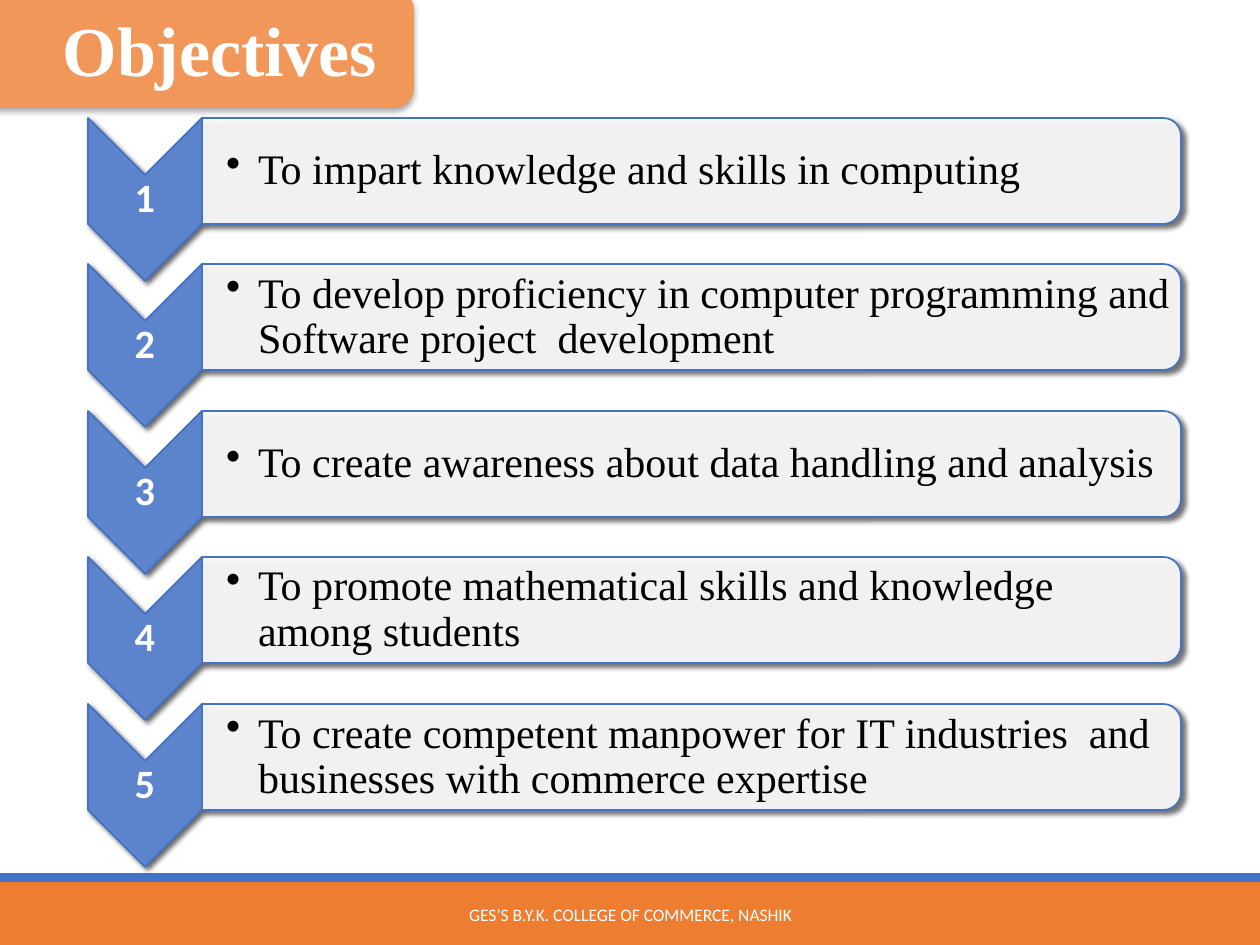
from lxml.etree import SubElement
from pptx import Presentation
from pptx.dml.color import RGBColor
from pptx.enum.shapes import MSO_SHAPE as Preset
from pptx.enum.text import MSO_ANCHOR as Anchor, PP_ALIGN as Align
from pptx.oxml.ns import qn
from pptx.util import Pt

COLORS = {
    "orange": "ED7D31",
    "tab": "F19759",
    "blue": "4472C4",
    "chevron": "5C84CC",
    "white": "FFFFFF",
    "black": "000000",
}
SERIF, SANS = "Times New Roman", "Calibri"
PX_PER_INCH = 126
ROW_PITCH = 146.4
OBJECTIVES = [
    "To impart knowledge and skills in computing",
    "To develop proficiency in computer programming and Software project  development",
    "To create awareness about data handling and analysis",
    "To promote mathematical skills and knowledge among students",
    "To create competent manpower for IT industries  and businesses with commerce expertise",
]


def px(length):
    return round(length * 914400 / PX_PER_INCH)


def rgb(name):
    return RGBColor.from_string(COLORS[name])


class Deck:
    def __init__(self, width, height):
        self.presentation = Presentation()
        self.presentation.slide_width = px(width)
        self.presentation.slide_height = px(height)
        self.slide = self.presentation.slides.add_slide(self.presentation.slide_layouts[5])

    def panel(self, preset, box, fill, line=None, shadow=None, opacity=None):
        panel = self.slide.shapes.add_shape(preset, *map(px, box))
        panel.shadow.inherit = False
        panel.fill.solid()
        panel.fill.fore_color.rgb = rgb(fill)
        if opacity:
            color = panel._element.spPr.find(qn("a:solidFill"))[0]
            SubElement(color, qn("a:alpha"), val=str(opacity * 1000))
        if line:
            panel.line.color.rgb = rgb(line)
            panel.line.width = Pt(1)
        else:
            panel.line.fill.background()
        if shadow:
            self.cast_shadow(panel, *shadow)
        return panel

    def cast_shadow(self, panel, opacity, blur, distance, angle):
        effects = panel._element.spPr.find(qn("a:effectLst"))
        outer = SubElement(
            effects, qn("a:outerShdw"), blurRad=str(Pt(blur)), dist=str(Pt(distance)),
            dir=str(angle * 60000), algn="ctr", rotWithShape="0")
        color = SubElement(outer, qn("a:srgbClr"), val=COLORS["black"])
        SubElement(color, qn("a:alpha"), val=str(opacity * 1000))

    def turned_panel(self, preset, box, fill, opacity=None):
        left, top, width, height = box
        shift = (width - height) / 2
        panel = self.panel(
            preset, (left + shift, top - shift, height, width), fill,
            line="blue", shadow=(60, 3, 2, 45), opacity=opacity)
        panel.rotation = 90

    def set_text(self, holder, text, size, font, color, bold=False, align=Align.CENTER,
                 spacing=None, insets=(2, 2), bullet=False):
        frame = holder.text_frame
        frame.word_wrap = True
        frame.vertical_anchor = Anchor.MIDDLE
        frame.margin_left, frame.margin_right = map(px, insets)
        frame.margin_top = frame.margin_bottom = px(2)
        frame.text = text
        paragraph = frame.paragraphs[0]
        paragraph.alignment = align
        if spacing:
            paragraph.line_spacing = spacing
        if bullet:
            properties = paragraph._p.get_or_add_pPr()
            properties.set("marL", str(px(32)))
            properties.set("indent", str(px(-32)))
            SubElement(properties, qn("a:buChar"), char="•")
        paragraph.font.size = Pt(size)
        paragraph.font.name = font
        paragraph.font.bold = bold
        paragraph.font.color.rgb = rgb(color)

    def label(self, box, text, size, font, color, **style):
        holder = self.slide.shapes.add_textbox(*map(px, box))
        self.set_text(holder, text, size, font, color, **style)

    def title(self, box, text):
        title = self.slide.shapes.title
        title.left, title.top, title.width, title.height = map(px, box)
        tree = title._element.getparent()
        tree.append(title._element)
        self.set_text(title, text, 40, SERIF, "white", bold=True)

    def objective(self, number, text):
        top = 118 + round((number - 1) * ROW_PITCH)
        self.turned_panel(Preset.CHEVRON, (88, top, 114, 163), "chevron")
        self.label((88, top + 57, 114, 49), str(number), 23, SANS, "white",
                   bold=True, spacing=0.9)
        self.turned_panel(Preset.ROUND_2_SAME_RECTANGLE, (202, top, 979, 106), "white",
                          opacity=90)
        self.label((202, top + 5, 974, 96), text, 24, SERIF, "black",
                   align=Align.LEFT, spacing=0.9, insets=(24, 2), bullet=True)


def main():
    deck = Deck(1260, 945)
    deck.panel(Preset.RECTANGLE, (0, 882, 1260, 63), "orange")
    deck.panel(Preset.RECTANGLE, (0, 873, 1260, 9), "blue")
    deck.label((381, 890, 499, 50), "GES’S B.Y.K. COLLEGE OF COMMERCE, NASHIK",
               10, SANS, "white")
    deck.panel(Preset.ROUNDED_RECTANGLE, (-79, -10, 493, 118), "tab", shadow=(32, 3.5, 2.2, 90))
    deck.title((40, -10, 360, 118), "Objectives")
    for number, text in enumerate(OBJECTIVES, 1):
        deck.objective(number, text)
    deck.presentation.save("out.pptx")


if __name__ == "__main__":
    main()
